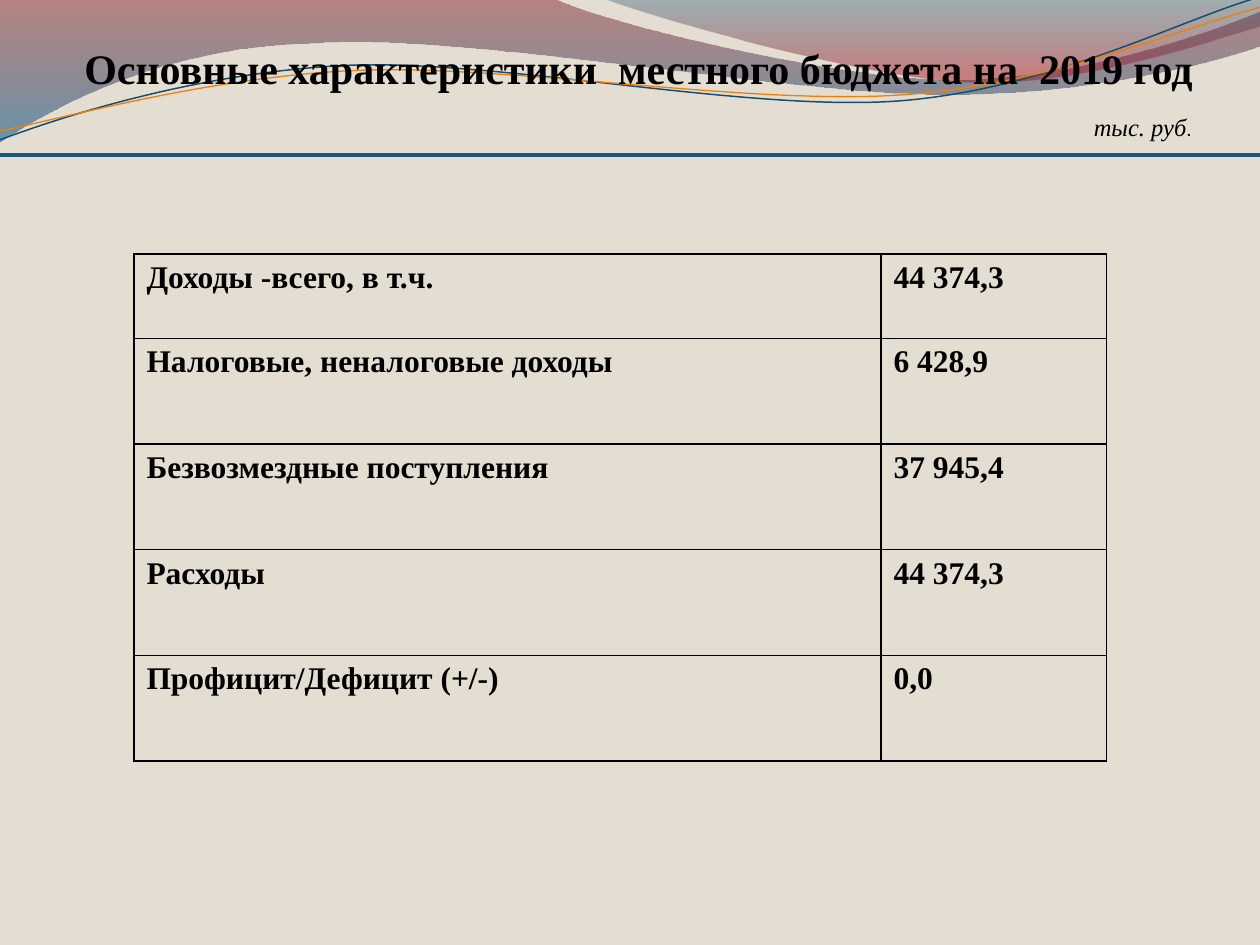
"""Builds the slide with the main figures of the local budget for 2019."""
import lxml.etree
import pptx
import pptx.dml.color
import pptx.enum.shapes
import pptx.enum.text
import pptx.oxml.ns
import pptx.util

Cm = pptx.util.Cm
Pt = pptx.util.Pt
RGBColor = pptx.dml.color.RGBColor
qn = pptx.oxml.ns.qn

SAND = RGBColor(0xE3, 0xDE, 0xD1)
BLACK = RGBColor(0x00, 0x00, 0x00)
CRIMSON = RGBColor(0x7E, 0x16, 0x21)
RED = RGBColor(0xA1, 0x0F, 0x1F)
BLUE = RGBColor(0x00, 0x56, 0x89)
NAVY = RGBColor(0x09, 0x44, 0x67)
WAVE_BLUE = RGBColor(0x18, 0x4E, 0x6D)
WAVE_ORANGE = RGBColor(0xF0, 0x7F, 0x09)
RULE_BLUE = RGBColor(0x1B, 0x58, 0x7C)
PALE_SHADOW = RGBColor(0xF0, 0xEE, 0xF8)

LONG_RIBBON = [
    [(0, 0)],
    [(11.18, -0.03)],
    [(12.09, 0.43), (16.87, 1.6), (19.25, 1.6)],
    [(21.67, 1.6), (24.33, 0.66), (25.4, 0.23)],
    [(25.43, 0.91)],
    [(24.97, 1.12), (22.1, 1.93), (18.95, 1.9)],
    [(15.8, 1.9), (9.7, 0.71), (6.53, 0.86)],
    [(3.28, 0.91), (1.17, 2.11), (-0.03, 2.87)],
    [(0, 0)],
]
SHORT_RIBBON = [
    [(12.17, -0.03)],
    [(12.93, 0.28), (17.32, 1.57), (19.53, 1.65)],
    [(21.74, 1.75), (24.41, 0.81), (25.4, 0.53)],
    [(25.4, 0)],
    [(12.17, -0.03)],
]
BLUE_WAVE = [
    [(-0.05, 2.22)],
    [(1.19, 1.82), (4.02, 1.04), (7.05, 1.05)],
    [(10.05, 1.07), (15.02, 2.37), (18.08, 2.29)],
    [(21.14, 2.2), (23.87, 0.91), (25.41, 0.55)],
]
ORANGE_WAVE = [
    [(-0.04, 2.04)],
    [(1.16, 1.87), (4.18, 1.15), (7.2, 1.16)],
    [(10.25, 1.18), (15.13, 2.25), (18.18, 2.17)],
    [(21.21, 2.1), (23.93, 1.06), (25.45, 0.75)],
]
BUDGET = [
    ("Доходы -всего, в т.ч.", "44 374,3"),
    ("Налоговые, неналоговые доходы", "6 428,9"),
    ("Безвозмездные поступления", "37 945,4"),
    ("Расходы", "44 374,3"),
    ("Профицит/Дефицит (+/-)", "0,0"),
]


def write_text(paragraph, text, *, size, font="Times New Roman", color=BLACK,
               bold=False, italic=False):
    run = paragraph.add_run()
    run.text = text
    run.font.name = font
    run.font.size = Pt(size)
    run.font.bold = bold
    run.font.italic = italic
    run.font.color.rgb = color


def bend(shape, segments):
    lines = iter(list(shape.element.iter(qn("a:lnTo"))))
    for segment in segments[1:]:
        steps = [next(lines) for _ in segment]
        if len(steps) == 3:
            curve = lxml.etree.Element(qn("a:cubicBezTo"))
            steps[0].addprevious(curve)
            for step in steps:
                curve.append(step[0])
                step.getparent().remove(step)


def add_color(parent, color, opacity=100):
    element = lxml.etree.SubElement(parent, qn("a:srgbClr"), val=str(color))
    if opacity < 100:
        lxml.etree.SubElement(element, qn("a:alpha"), val=str(opacity * 1000))


class SlideBuilder:
    def __init__(self, slide, background=SAND, border_width=1):
        self.slide = slide
        self.border_width = border_width
        slide.background.fill.solid()
        slide.background.fill.fore_color.rgb = background

    def outline(self, segments, closed):
        points = [(Cm(x), Cm(y)) for segment in segments for x, y in segment]
        builder = self.slide.shapes.build_freeform(*points[0])
        builder.add_line_segments(points[1:], close=closed)
        shape = builder.convert_to_shape()
        bend(shape, segments)
        shape.shadow.inherit = False
        return shape

    def ribbon(self, segments, stops):
        shape = self.outline(segments, closed=True)
        shape.line.fill.background()
        shape.fill.gradient()
        shape.fill.gradient_angle = 270
        for stop, (position, color, _) in zip(shape.fill.gradient_stops, stops):
            stop.position = position
            stop.color.rgb = color
        colors = list(shape.element.spPr.iter(qn("a:srgbClr")))
        for element, (_, _, opacity) in zip(colors, stops):
            lxml.etree.SubElement(element, qn("a:alpha"), val=str(opacity * 1000))

    def wave(self, segments, color, width):
        shape = self.outline(segments, closed=False)
        shape.rotation = 357.3
        shape.fill.background()
        shape.line.color.rgb = color
        shape.line.width = Pt(width)
        return shape

    def group(self, shapes):
        self.slide.shapes.add_group_shape(shapes)

    def rule(self, left, right, top, color, width):
        line = self.slide.shapes.add_connector(
            pptx.enum.shapes.MSO_CONNECTOR.STRAIGHT, Cm(right), Cm(top), Cm(left), Cm(top))
        line.line.color.rgb = color
        line.line.width = Pt(width)
        effects = lxml.etree.SubElement(line.element.spPr, qn("a:effectLst"))
        shadow = lxml.etree.SubElement(
            effects, qn("a:outerShdw"), blurRad=str(Pt(4.5)), dist=str(Pt(3)),
            dir="5400000", rotWithShape="0")
        add_color(shadow, PALE_SHADOW, 48)

    def text(self, left, top, width, height, alignment=None, wrap=True):
        box = self.slide.shapes.add_textbox(Cm(left), Cm(top), Cm(width), Cm(height))
        box.text_frame.word_wrap = wrap
        paragraph = box.text_frame.paragraphs[0]
        paragraph.alignment = alignment
        return paragraph

    def table(self, left, top, column_widths, row_heights, rows):
        table = self.slide.shapes.add_table(
            len(rows), len(column_widths), Cm(left), Cm(top),
            Cm(sum(column_widths)), Cm(sum(row_heights))).table
        table.first_row = table.horz_banding = False
        for column, width in zip(table.columns, column_widths):
            column.width = Cm(width)
        for row, height, texts in zip(table.rows, row_heights, rows):
            row.height = Cm(height)
            for cell, text in zip(row.cells, texts):
                self.border(cell)
                cell.fill.background()
                write_text(cell.text_frame.paragraphs[0], text, size=18, bold=True)

    def border(self, cell):
        properties = cell._tc.get_or_add_tcPr()
        for side in ("a:lnL", "a:lnR", "a:lnT", "a:lnB"):
            line = lxml.etree.SubElement(properties, qn(side), w=str(Pt(self.border_width)))
            add_color(lxml.etree.SubElement(line, qn("a:solidFill")), BLACK)


def main():
    presentation = pptx.Presentation()
    presentation.slide_width = Cm(25.4)
    presentation.slide_height = Cm(19.05)
    builder = SlideBuilder(presentation.slides.add_slide(presentation.slide_layouts[6]))

    builder.ribbon(LONG_RIBBON, [(0, CRIMSON, 45), (1, BLUE, 55)])
    builder.ribbon(SHORT_RIBBON, [(0, NAVY, 30), (0.8, RED, 45)])
    builder.group([builder.wave(BLUE_WAVE, WAVE_BLUE, 0.85),
                   builder.wave(ORANGE_WAVE, WAVE_ORANGE, 0.75)])
    builder.rule(0, 25.4, 3.12, RULE_BLUE, 2)

    title = builder.text(1.37, 0.73, 23.22, 2.03, wrap=False,
                         alignment=pptx.enum.text.PP_ALIGN.CENTER)
    write_text(title, "Основные характеристики  местного бюджета на  2019 год ",
               size=24, bold=True)
    builder.table(2.7, 5.12, [15.06, 4.55], [1.7] + [2.13] * 4, BUDGET)
    unit = builder.text(21.8, 2.13, 3.6, 0.99)
    write_text(unit, "тыс. руб", size=14, italic=True)
    write_text(unit, ".", size=11, font="Calibri")

    presentation.save("out.pptx")


if __name__ == "__main__":
    main()
